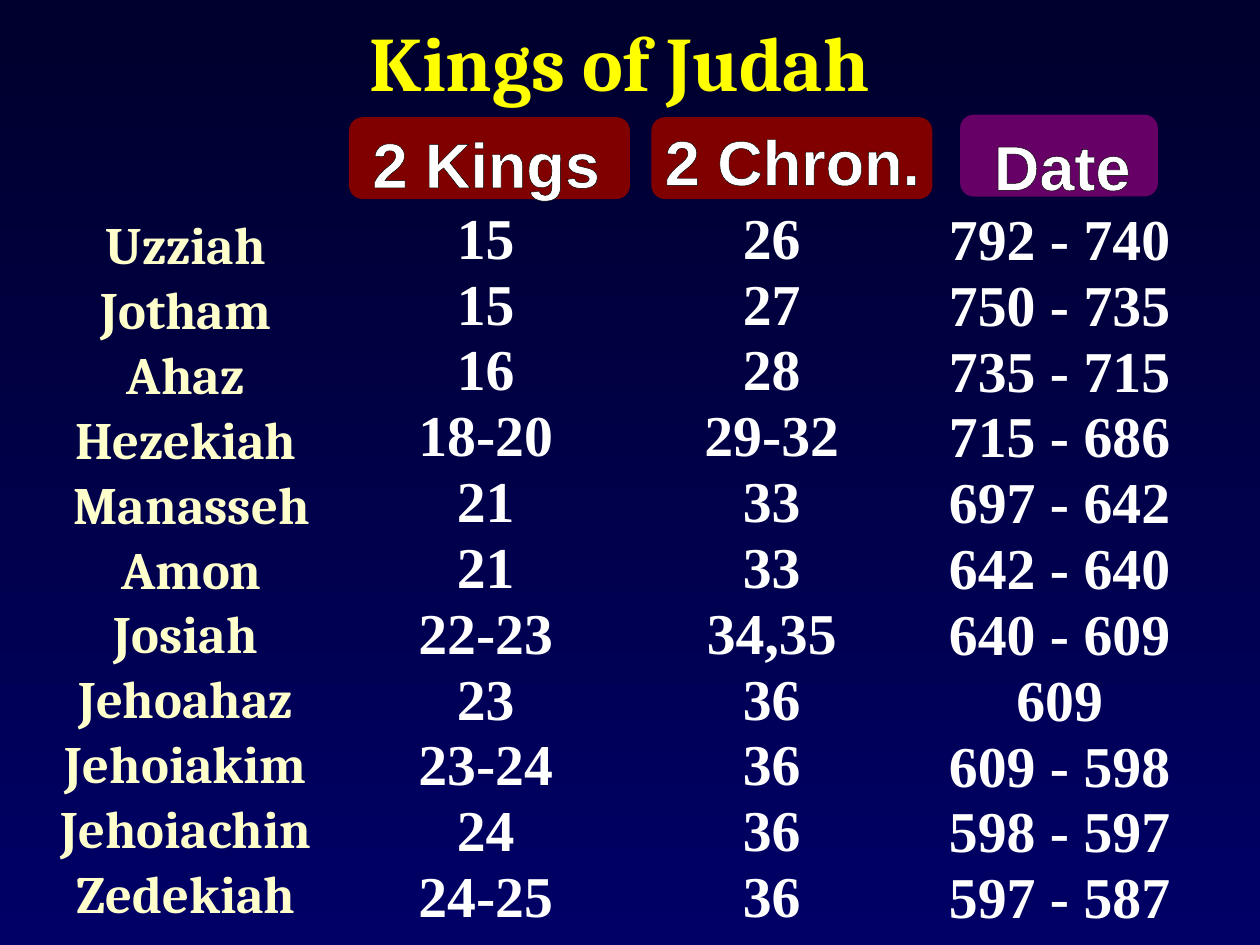
from pptx import Presentation
from pptx.dml.color import RGBColor
from pptx.enum.shapes import MSO_SHAPE
from pptx.enum.text import MSO_ANCHOR, MSO_AUTO_SIZE, PP_ALIGN
from pptx.util import Inches, Pt
from lxml import etree

COLORS = {
    "top": "00002C", "bottom": "000066", "title": "FFFF00", "name": "FFFFCC",
    "white": "FFFFFF", "outline": "000000", "book": "800000", "date": "660066",
}
TITLE = "Kings of Judah"
KINGS = [
    ("Uzziah", "15", "26", "792 - 740"),
    ("Jotham", "15", "27", "750 - 735"),
    ("Ahaz", "16", "28", "735 - 715"),
    ("Hezekiah", "18-20", "29-32", "715 - 686"),
    (" Manasseh", "21", "33", "697 - 642"),
    (" Amon", "21", "33", "642 - 640"),
    ("Josiah", "22-23", "34,35", "640 - 609"),
    ("Jehoahaz", "23", "36", "609"),
    ("Jehoiakim", "23-24", "36", "609 - 598"),
    ("Jehoiachin", "24", "36", "598 - 597"),
    ("Zedekiah", "24-25", "36", "597 - 587"),
]
# Label, panel colour, panel box, label box
HEADERS = [
    ("2 Kings", "book", (2.77, 0.93, 2.23, 0.65), (2.88, 1.01, 1.96, 0.5)),
    ("2 Chron.", "book", (5.17, 0.93, 2.23, 0.65), (5.27, 0.99, 2.04, 0.42)),
    ("Date", "date", (7.62, 0.91, 1.57, 0.65), (7.82, 1.03, 1.22, 0.39)),
]
COLUMN_BOXES = [
    (0.19, 1.62, 2.57, 5.77),
    (3.22, 1.59, 1.27, 5.85),
    (5.49, 1.59, 1.27, 5.85),
    (7.43, 1.6, 1.96, 5.85),
]
# Font, size, colour, line spacing
TITLE_STYLE = ("Cambria", 44, "title", 1.1)
NAME_STYLE = ("Cambria", 30, "name", 1.03)
NUMBER_STYLE = ("Times New Roman", 33, "white", 0.95)
HEADER_STYLE = ("Arial", 36, "white", 0.9)


def color(key):
    return RGBColor.from_string(COLORS[key])


def place(shape, box):
    shape.left, shape.top, shape.width, shape.height = map(Inches, box)


def write(shape, lines, style):
    font_name, size, color_key, spacing = style
    frame = shape.text_frame
    frame.word_wrap = False
    frame.vertical_anchor = MSO_ANCHOR.TOP
    for index, line in enumerate(lines):
        paragraph = frame.add_paragraph() if index else frame.paragraphs[0]
        paragraph.alignment = PP_ALIGN.CENTER
        paragraph.line_spacing = spacing
        paragraph.space_before = Pt(0)
        run = paragraph.add_run()
        run.text = line
        run.font.name = font_name
        run.font.size = Pt(size)
        run.font.bold = True
        run.font.color.rgb = color(color_key)


def add_text(slide, box, lines, style):
    shape = slide.shapes.add_textbox(*map(Inches, box))
    write(shape, lines, style)
    return shape


def outline_text(shape):
    """Draw a thin dark line around the letters."""
    namespace = "http://schemas.openxmlformats.org/drawingml/2006/main"
    for paragraph in shape.text_frame.paragraphs:
        for run in paragraph.runs:
            line = etree.fromstring(
                f'<a:ln xmlns:a="{namespace}" w="{Pt(0.75)}"><a:solidFill>'
                f'<a:srgbClr val="{COLORS["outline"]}"/></a:solidFill></a:ln>')
            run.font._element.insert(0, line)


def main():
    presentation = Presentation()
    presentation.slide_width = Inches(10)
    presentation.slide_height = Inches(7.5)
    slide = presentation.slides.add_slide(presentation.slide_layouts[5])

    background = slide.background.fill
    background.gradient()
    background.gradient_angle = 270
    for stop, key in zip(background.gradient_stops, ("top", "bottom")):
        stop.color.rgb = color(key)

    title = slide.shapes.title
    place(title, (2.47, -0.01, 4.9, 0.91))
    write(title, [TITLE], TITLE_STYLE)
    title.text_frame.auto_size = MSO_AUTO_SIZE.SHAPE_TO_FIT_TEXT

    for label, panel_color, panel_box, label_box in HEADERS:
        panel = slide.shapes.add_shape(
            MSO_SHAPE.ROUNDED_RECTANGLE, *map(Inches, panel_box))
        panel.shadow.inherit = False
        panel.fill.solid()
        panel.fill.fore_color.rgb = color(panel_color)
        panel.line.fill.background()
        header = add_text(slide, label_box, [label], HEADER_STYLE)
        header.text_frame.margin_left = header.text_frame.margin_right = 0
        outline_text(header)

    for index, (box, column) in enumerate(zip(COLUMN_BOXES, zip(*KINGS))):
        style = NUMBER_STYLE if index else NAME_STYLE
        shape = add_text(slide, box, column, style)
        shape.text_frame.auto_size = MSO_AUTO_SIZE.SHAPE_TO_FIT_TEXT

    presentation.save("out.pptx")


if __name__ == "__main__":
    main()
